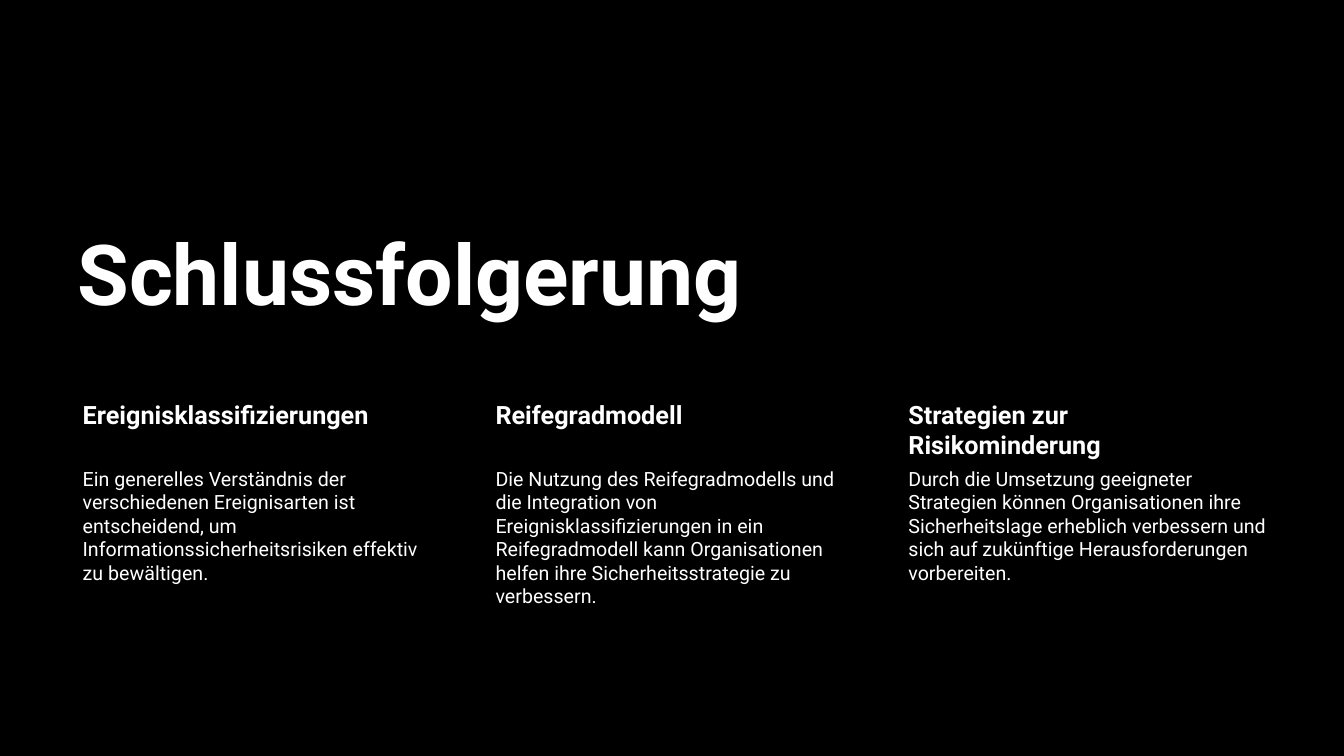
import pptx
import pptx.dml.color
import pptx.enum.text
import pptx.util

TITLE = "Schlussfolgerung"
COLUMNS = [
    ("Ereignisklassifizierungen",
     "Ein generelles Verständnis der verschiedenen Ereignisarten ist entscheidend, um "
     "Informationssicherheitsrisiken effektiv zu bewältigen."),
    ("Reifegradmodell",
     "Die Nutzung des Reifegradmodells und die Integration von Ereignisklassifizierungen "
     "in ein Reifegradmodell kann Organisationen helfen ihre Sicherheitsstrategie zu "
     "verbessern."),
    ("Strategien zur Risikominderung",
     "Durch die Umsetzung geeigneter Strategien können Organisationen ihre "
     "Sicherheitslage erheblich verbessern und sich auf zukünftige Herausforderungen "
     "vorbereiten."),
]

BLACK = pptx.dml.color.RGBColor(0x00, 0x00, 0x00)
WHITE = pptx.dml.color.RGBColor(0xFF, 0xFF, 0xFF)
ANCHOR = pptx.enum.text.MSO_ANCHOR

# Lengths in inches; insets run left, top, right, bottom
SLIDE_WIDTH, SLIDE_HEIGHT = 13.33, 7.5
LEFT, RIGHT = 0.67, 12.58
COLUMN_WIDTH = 3.72
COLUMN_STEP = (RIGHT - LEFT - COLUMN_WIDTH) / (len(COLUMNS) - 1)
HEADING_TOP, HEADING_HEIGHT = 3.93, 0.68
BODY_TOP, BODY_HEIGHT = HEADING_TOP + HEADING_HEIGHT, 2.06

TITLE_STYLE = {"size": 60, "bold": True, "insets": (0.1, 0.05, 0.1, 0.05),
               "anchor": ANCHOR.BOTTOM, "line_spacing": 0.9}
HEADING_STYLE = {"size": 18, "bold": True, "insets": (0.15, 0.03, 0.03, 0.03),
                 "anchor": ANCHOR.TOP, "line_spacing": 1.0}
BODY_STYLE = {"size": 14, "bold": False, "insets": (0.15, 0.02, 0.02, 0.02),
              "anchor": ANCHOR.TOP, "line_spacing": 1.0}


def add_text(page, text, bounds, style):
    box = page.shapes.add_textbox(*map(pptx.util.Inches, bounds))
    frame = box.text_frame
    frame.word_wrap = True
    frame.vertical_anchor = style["anchor"]
    for side, inset in zip(("left", "top", "right", "bottom"), style["insets"]):
        setattr(frame, f"margin_{side}", pptx.util.Inches(inset))
    para = frame.paragraphs[0]
    para.line_spacing = style["line_spacing"]
    span = para.add_run()
    span.text = text
    font_format = {"name": "Roboto", "size": pptx.util.Pt(style["size"]),
                   "bold": style["bold"]}
    for name, value in font_format.items():
        setattr(span.font, name, value)
    span.font.color.rgb = WHITE


def main():
    deck = pptx.Presentation()
    deck.slide_width = pptx.util.Inches(SLIDE_WIDTH)
    deck.slide_height = pptx.util.Inches(SLIDE_HEIGHT)
    page = deck.slides.add_slide(deck.slide_layouts[6])
    page.background.fill.solid()
    page.background.fill.fore_color.rgb = BLACK

    add_text(page, TITLE, (LEFT, 2.02, 8.03, 1.24), TITLE_STYLE)
    for index, (heading, body) in enumerate(COLUMNS):
        left = LEFT + index * COLUMN_STEP
        add_text(page, heading, (left, HEADING_TOP, COLUMN_WIDTH, HEADING_HEIGHT),
                 HEADING_STYLE)
        add_text(page, body, (left, BODY_TOP, COLUMN_WIDTH, BODY_HEIGHT), BODY_STYLE)

    deck.save("out.pptx")


if __name__ == "__main__":
    main()
